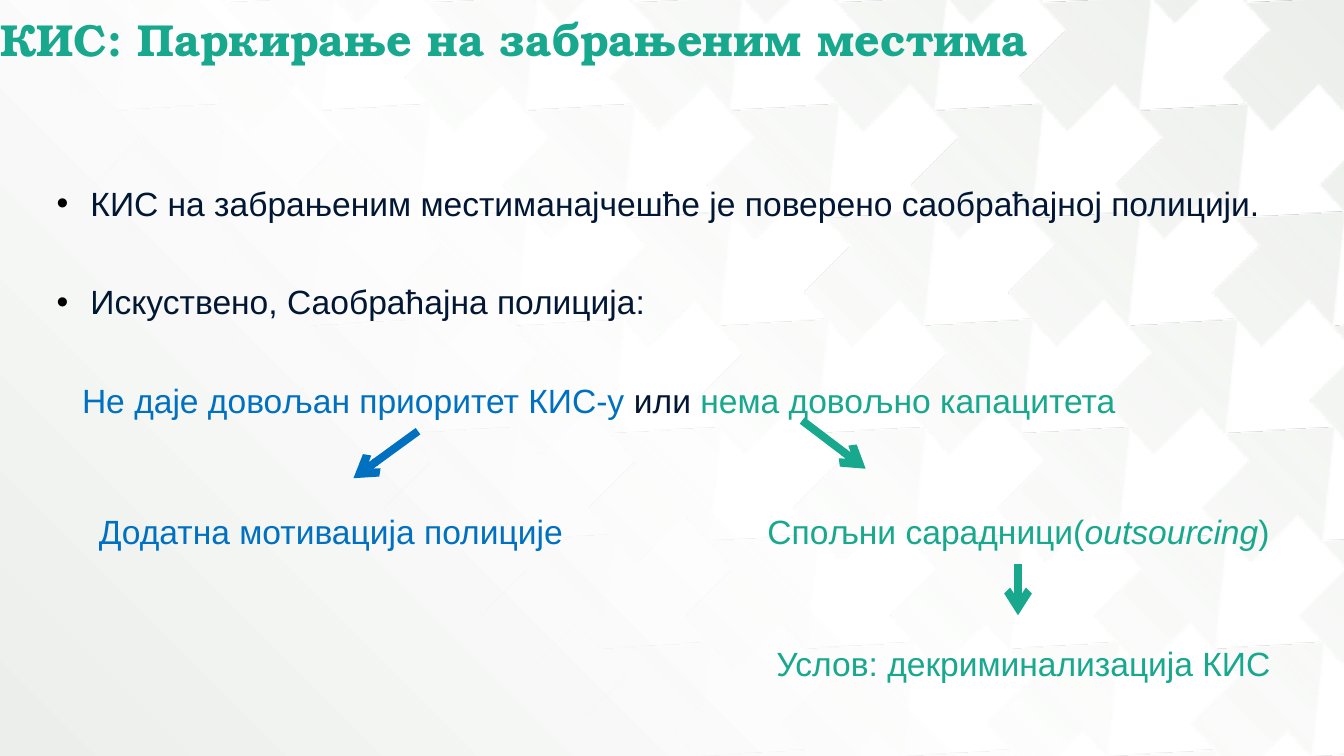
import lxml.etree
import pptx
import pptx.dml.color
import pptx.enum.shapes
import pptx.enum.text
import pptx.oxml
import pptx.oxml.ns
import pptx.util

Cm = pptx.util.Cm
Pt = pptx.util.Pt
GREEN, BLUE, NAVY = "18A88D", "0070C0", "011733"
WHITE, GREY = "FFFFFF", "EBEEEA"
WIDTH, HEIGHT = 25.4, 14.29
TILE = [(0, 0), (0.46, 0.51), (-0.43, 1.4), (0.03, 1.91),
        (0.48, 2.41), (1.37, 1.52), (1.83, 2.03), (2.06, -0.13)]


def color(value):
    """Turn a hex string into a colour."""
    return pptx.dml.color.RGBColor.from_string(value)


def gradient(stops, direction):
    """Return a gradient fill element from (percent, hex, opacity) stops."""
    marks = "".join(
        f'<a:gs pos="{place * 1000}"><a:srgbClr val="{value}">'
        f'<a:alpha val="{opacity * 1000}"/></a:srgbClr></a:gs>'
        for place, value, opacity in stops)
    return pptx.oxml.parse_xml(
        f'<a:gradFill {pptx.oxml.ns.nsdecls("a")} rotWithShape="1">'
        f'<a:gsLst>{marks}</a:gsLst>{direction}</a:gradFill>')


def replace_gradient(fill, owner, element):
    """Give a fill the prepared gradient element."""
    fill.gradient()
    current = owner.xpath(".//a:gradFill")[0]
    current.getparent().replace(current, element)


def clip(points, axis, limit, sign):
    """Keep the part of a polygon on one side of an axis-parallel line."""
    kept = []
    for start, end in zip(points, points[1:] + points[:1]):
        before, after = ((point[axis] - limit) * sign for point in (start, end))
        if before >= 0:
            kept.append(start)
        if before * after < 0:
            share = before / (before - after)
            kept.append(tuple(a + share * (b - a) for a, b in zip(start, end)))
    return kept


def add_backdrop(page):
    """Fill the background with a soft glow from the top right corner."""
    focus = '<a:path path="circle"><a:fillToRect l="100000" b="100000"/></a:path>'
    element = gradient([(0, WHITE, 100), (50, WHITE, 100), (100, GREY, 100)], focus)
    replace_gradient(page.background.fill, page.element, element)


def add_pattern(page, left, top, width, height):
    """Lay interlocking arrow tiles on a slanted grid, cut to the box."""
    tiles = []
    for row in range(-2, 7):
        for column in range(10):
            x = left + 0.86 + 1.83 * row + 3.86 * column
            y = top + 2.11 + 2.03 * row
            tile = [(x + across, y + down) for across, down in TILE]
            for edge in ((0, left, 1), (0, left + width, -1),
                         (1, top, 1), (1, top + height, -1)):
                tile = clip(tile, *edge)
            if len(tile) > 2:
                tiles.append([(Cm(across), Cm(down)) for across, down in tile])
    builder = page.shapes.build_freeform(*tiles[0][0])
    for tile in tiles:
        builder.move_to(*tile[0])
        builder.add_line_segments(tile[1:], close=True)
    pattern = builder.convert_to_shape()
    pattern.shadow.inherit = False
    pattern.line.fill.background()
    element = gradient([(0, GREY, 100), (80, WHITE, 0), (100, WHITE, 0)],
                       '<a:lin ang="8100000" scaled="0"/>')
    replace_gradient(pattern.fill, pattern.element, element)
    pattern.element.getparent().insert(2, pattern.element)


def place(box, left, top, width, height):
    """Move a shape to the given box."""
    box.left, box.top, box.width, box.height = map(Cm, (left, top, width, height))


def add_span(para, text, value, size=18, font="Arial", italic=False, bold=False):
    """Append a formatted run to a paragraph."""
    span = para.add_run()
    span.text = text
    span.font.size = Pt(size)
    span.font.name = font
    span.font.italic = italic
    span.font.bold = bold
    span.font.color.rgb = color(value)


def add_title(page, left, top, width, height, text):
    """Fill the title placeholder."""
    box = page.shapes.title
    place(box, left, top, width, height)
    frame = box.text_frame
    frame.margin_left = frame.margin_top = frame.margin_right = frame.margin_bottom = 0
    frame.vertical_anchor = pptx.enum.text.MSO_ANCHOR.TOP
    frame.auto_size = pptx.enum.text.MSO_AUTO_SIZE.NONE
    para = frame.paragraphs[0]
    para.alignment = pptx.enum.text.PP_ALIGN.LEFT
    para.line_spacing = 0.9
    add_span(para, text, GREEN, 24, "TeX Gyre Bonum", bold=True)


def set_bullet(para, left, indent, mark):
    """Set a paragraph's indents and its bullet, or none."""
    properties = para._p.get_or_add_pPr()
    properties.set("marL", str(Cm(left)))
    properties.set("indent", str(Cm(indent)))
    if mark:
        tint = lxml.etree.SubElement(properties, pptx.oxml.ns.qn("a:buClr"))
        lxml.etree.SubElement(tint, pptx.oxml.ns.qn("a:srgbClr"), val="000000")
        lxml.etree.SubElement(properties, pptx.oxml.ns.qn("a:buChar"), char=mark)
    else:
        lxml.etree.SubElement(properties, pptx.oxml.ns.qn("a:buNone"))


def add_body(page, left, top, width, height, items):
    """Fill the body placeholder with (mark, spans) items."""
    box = page.placeholders[1]
    place(box, left, top, width, height)
    frame = box.text_frame
    frame.margin_left = frame.margin_right = Cm(0.18)
    frame.margin_top, frame.margin_bottom = Cm(1.98), Cm(0.1)
    frame.auto_size = pptx.enum.text.MSO_AUTO_SIZE.NONE
    for number, (mark, spans) in enumerate(items):
        para = frame.add_paragraph() if number else frame.paragraphs[0]
        para.line_spacing = 1.2
        para.space_before = Pt(27 if number else 0)
        set_bullet(para, *((0.64, -0.64) if mark else (0.48, 0)), mark)
        for text, value in spans:
            add_span(para, text, value)


def add_label(page, left, top, width, value, spans):
    """Add a centred line of (text, italic) spans."""
    box = page.shapes.add_textbox(Cm(left), Cm(top), Cm(width), Cm(0.97))
    frame = box.text_frame
    frame.word_wrap = True
    frame.margin_left = frame.margin_right = Cm(0.18)
    frame.margin_top = frame.margin_bottom = Cm(0.1)
    para = frame.paragraphs[0]
    para.alignment = pptx.enum.text.PP_ALIGN.CENTER
    for text, italic in spans:
        add_span(para, text, value, italic=italic)


def add_arrow(page, start, end, value):
    """Draw a thick arrow between two points."""
    arrow = page.shapes.add_connector(
        pptx.enum.shapes.MSO_CONNECTOR.STRAIGHT, *map(Cm, start + end))
    arrow.line.color.rgb = color(value)
    arrow.line.width = Pt(4.25)
    line = arrow.line._get_or_add_ln()
    lxml.etree.SubElement(line, pptx.oxml.ns.qn("a:tailEnd"), type="arrow")
    properties = arrow.element.spPr
    lxml.etree.SubElement(properties, pptx.oxml.ns.qn("a:effectLst"))


def main():
    """Build and save the deck."""
    deck = pptx.Presentation()
    deck.slide_width, deck.slide_height = Cm(WIDTH), Cm(HEIGHT)
    page = deck.slides.add_slide(deck.slide_layouts[1])
    add_backdrop(page)
    add_pattern(page, 1.35, 0, WIDTH - 1.35, HEIGHT)
    add_title(page, 0, 0.33, 21.89, 1.88, "КИС: Паркирање на забрањеним местима")
    add_body(page, 0.89, 1.32, 24.05, 7.65, [
        ("•", [("КИС на забрањеним местиманајчешће је поверено "
                "саобраћајној полицији.", NAVY)]),
        ("•", [("Искуствено, Саобраћајна полиција:", NAVY)]),
        (None, [("Не даје довољан приоритет КИС-у ", BLUE), ("или ", NAVY),
                ("нема довољно капацитета", GREEN)]),
    ])
    add_arrow(page, (7.9, 8.15), (6.68, 9.04), BLUE)
    add_arrow(page, (15.16, 7.95), (16.36, 8.86), GREEN)
    add_label(page, 13.79, 9.55, 10.92, GREEN,
              [("Спољни сарадници(", False), ("outsourcing", True), (")", False)])
    add_label(page, 0.97, 9.55, 10.57, BLUE, [("Додатна мотивација полиције", False)])
    add_arrow(page, (19.24, 10.67), (19.24, 11.63), GREEN)
    add_label(page, 13.72, 12.06, 11.25, GREEN, [("Услов: декриминализација КИС", False)])
    deck.save("out.pptx")


if __name__ == "__main__":
    main()
